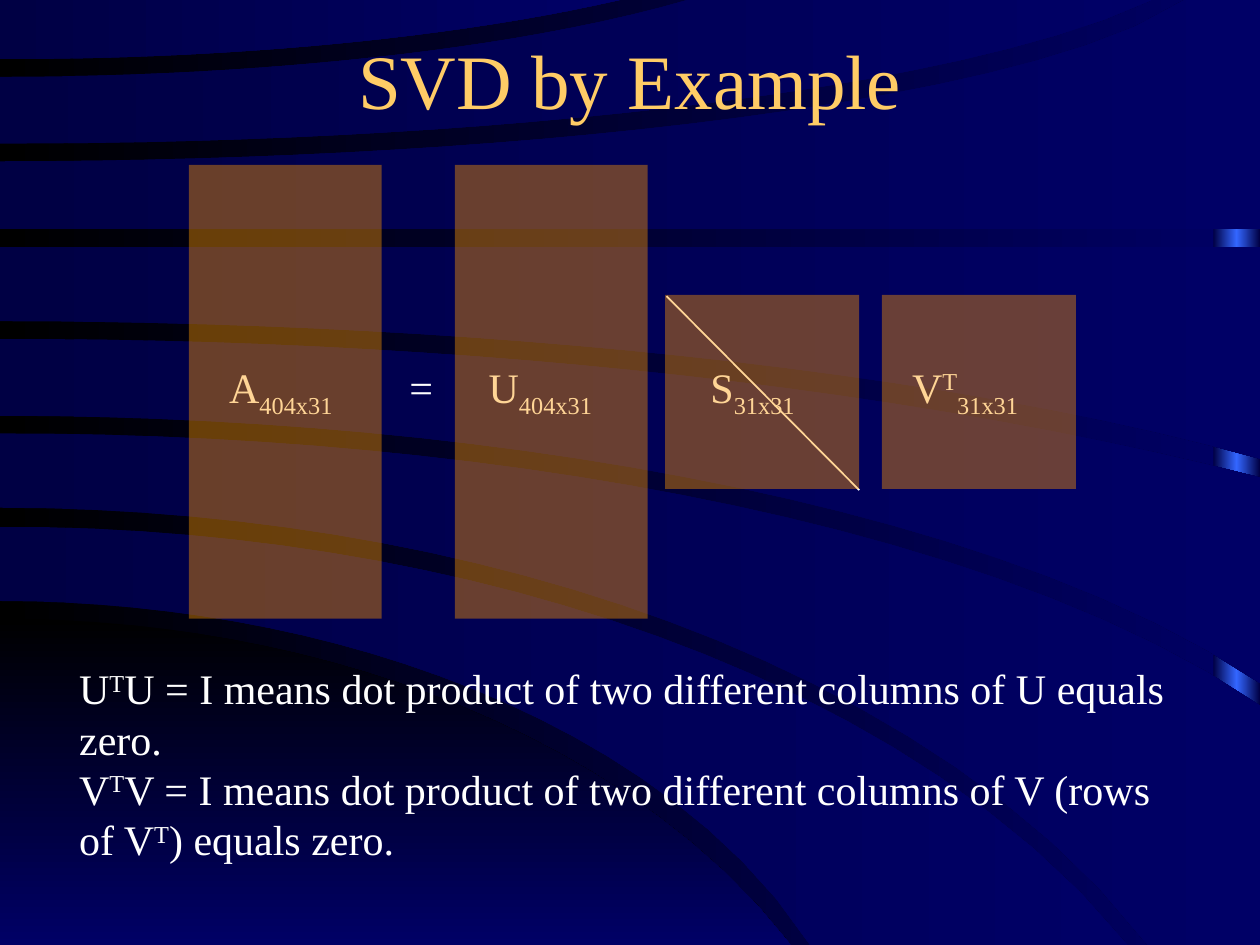
from copy import deepcopy
from dataclasses import dataclass
from math import sqrt

from lxml.etree import SubElement
from pptx import Presentation
from pptx.dml.color import RGBColor
from pptx.enum.shapes import MSO_CONNECTOR, MSO_SHAPE
from pptx.enum.text import MSO_ANCHOR, PP_ALIGN
from pptx.oxml.ns import qn
from pptx.util import Inches, Pt

WIDTH, HEIGHT = 10, 7.5
SUP, SUB = 30, -25


@dataclass(frozen=True)
class Theme:
    font: str = "Times New Roman"
    title_size: int = 44
    body_size: int = 24
    title: str = "FFCC66"
    text: str = "FFFFFF"
    black: str = "000000"
    navy: str = "000044"
    blue: str = "000066"
    glow: str = "3366FF"
    matrix: str = "FF9900"
    matrix_alpha: int = 41


@dataclass(frozen=True)
class Arc:
    """Quarter ellipse from the left side; a negative rise bends upwards."""
    y: float
    reach: float = WIDTH
    rise: float = 0

    def points(self, steps=24):
        if not self.rise:
            end = 0 if self.y in (0, HEIGHT) else WIDTH
            return [(0, self.y), (end, self.y)]
        limit = HEIGHT if self.rise > 0 else 0
        t = max(0, 1 - (limit - self.y) / self.rise)
        end = min(WIDTH, self.reach * sqrt(1 - t * t))
        xs = [end * i / steps for i in range(steps + 1)]
        return [(x, self.y + self.rise * (1 - sqrt(1 - (x / self.reach) ** 2)))
                for x in xs]


# Upper and lower edge of each backdrop band, from bottom to top
HILL = (Arc(4.91, 7.1, 4.86), Arc(HEIGHT))
BANDS = [
    (Arc(4.18, 9.9, 5.8), Arc(4.77, 6.95, 4.4)),
    (Arc(3.44, 11.2, 3.93), Arc(4.03, 10, 5.91)),
    (Arc(2.69, 15, 4.32), Arc(3.3, 11.2, 3.86)),
    (Arc(1.96), Arc(2.55, 13, 3.02)),
    (Arc(1.28, 9.7, -1.7), Arc(1.82)),
    (Arc(0.61, 7, -1.63), Arc(1.14, 9.8, -1.78)),
    (Arc(0), Arc(0.47, 7, -1.63)),
]


class Deck:
    def __init__(self, slide, theme):
        self.s, self.theme = slide, theme

    def gradient(self, fill, colors, angle=0):
        fill.gradient()
        fill.gradient_angle = angle
        first = fill.gradient_stops[0]._gs
        for _ in colors[2:]:
            first.addnext(deepcopy(first))
        for i, (stop, color) in enumerate(zip(fill.gradient_stops, colors)):
            stop.position = i / (len(colors) - 1)
            stop.color.rgb = RGBColor.from_string(color)

    def rect(self, x, y, w, h):
        sp = self.s.shapes.add_shape(
            MSO_SHAPE.RECTANGLE, Inches(x), Inches(y), Inches(w), Inches(h))
        sp.shadow.inherit = False
        sp.line.fill.background()
        return sp

    def matrix(self, x, y, w, h):
        fill = self.rect(x, y, w, h).fill
        fill.solid()
        fill.fore_color.rgb = RGBColor.from_string(self.theme.matrix)
        color = fill._xPr.find(qn("a:solidFill"))[0]
        SubElement(color, qn("a:alpha")).set("val", str(self.theme.matrix_alpha * 1000))

    def band(self, edges, colors, angle=0):
        upper, lower = (edge.points() for edge in edges)
        ends = sorted([upper[-1], lower[-1]])
        corner = (ends[1][0], ends[0][1])
        pts = [(Inches(x), Inches(y)) for x, y in upper + [corner] + lower[::-1]]
        builder = self.s.shapes.build_freeform(*pts[0])
        builder.add_line_segments(pts[1:], close=True)
        sp = builder.convert_to_shape()
        sp.shadow.inherit = False
        sp.line.fill.background()
        self.gradient(sp.fill, colors, angle)

    def line(self, x1, y1, x2, y2):
        cn = self.s.shapes.add_connector(
            MSO_CONNECTOR.STRAIGHT, Inches(x1), Inches(y1), Inches(x2), Inches(y2))
        cn.line.color.rgb = RGBColor.from_string(self.theme.text)
        cn.line.width = Pt(1)
        SubElement(cn._element.spPr, qn("a:effectLst"))

    def style(self, p, size, color):
        p.font.name = self.theme.font
        p.font.size = Pt(size)
        p.font.color.rgb = RGBColor.from_string(color)

    def title(self, text, x, y, w, h):
        sp = self.s.shapes.title
        sp.left, sp.top, sp.width, sp.height = map(Inches, (x, y, w, h))
        # Bring the title in front of the backdrop
        self.s.shapes._spTree.append(sp._element)
        tf = sp.text_frame
        tf.text = text
        tf.vertical_anchor = MSO_ANCHOR.MIDDLE
        p = tf.paragraphs[0]
        p.alignment = PP_ALIGN.CENTER
        self.style(p, self.theme.title_size, self.theme.title)

    def text(self, x, y, w, h, *lines):
        """Each line is a list of strings and (string, baseline) pairs."""
        tf = self.s.shapes.add_textbox(
            Inches(x), Inches(y), Inches(w), Inches(h)).text_frame
        tf.word_wrap = False
        for i, line in enumerate(lines):
            p = tf.add_paragraph() if i else tf.paragraphs[0]
            self.style(p, self.theme.body_size, self.theme.text)
            for part in line:
                text, base = (part, 0) if isinstance(part, str) else part
                r = p.add_run()
                r.text = text
                if base:
                    r._r.get_or_add_rPr().set("baseline", str(base * 1000))


def main():
    prs = Presentation()
    prs.slide_width, prs.slide_height = Inches(WIDTH), Inches(HEIGHT)
    s = prs.slides.add_slide(prs.slide_layouts[5])
    theme = Theme()
    deck = Deck(s, theme)

    # Backdrop
    deck.gradient(s.background.fill, [theme.black, theme.blue])
    strip = deck.rect(9.63, 0, 0.37, HEIGHT)
    deck.gradient(strip.fill, [theme.navy, theme.glow, theme.navy])
    deck.band(HILL, [theme.black, theme.blue], angle=270)
    for edges in BANDS:
        deck.band(edges, [theme.navy, theme.blue])

    # Title and explanation
    deck.title("SVD by Example", 0.75, 0, 8.5, 1.25)
    t = ("T", SUP)
    deck.text(
        0.53, 5.21, 8.91, 1.72,
        ["U", t, "U = I means dot product of two different columns of U equals"],
        ["zero."],
        ["V", t, "V = I means dot product of two different columns of V (rows"],
        ["of V", t, ") equals zero."])

    # Diagonal of S and the labels, seen through the matrices
    deck.line(5.29, 2.35, 6.82, 3.89)
    tall, square = ("404x31", SUB), ("31x31", SUB)
    for x, w, label in [
            (1.72, 1.12, ["A", tall]), (3.15, 0.39, ["="]), (3.78, 1.12, ["U", tall]),
            (5.54, 0.95, ["S", square]), (7.14, 1.14, ["V", t, square])]:
        deck.text(x, 2.82, w, 0.5, label)

    # Matrices: A and U are tall, S and V are square
    for x in (1.5, 3.61):
        deck.matrix(x, 1.31, 1.53, 3.6)
    for x in (5.28, 7):
        deck.matrix(x, 2.34, 1.54, 1.54)

    prs.save("out.pptx")


if __name__ == "__main__":
    main()
